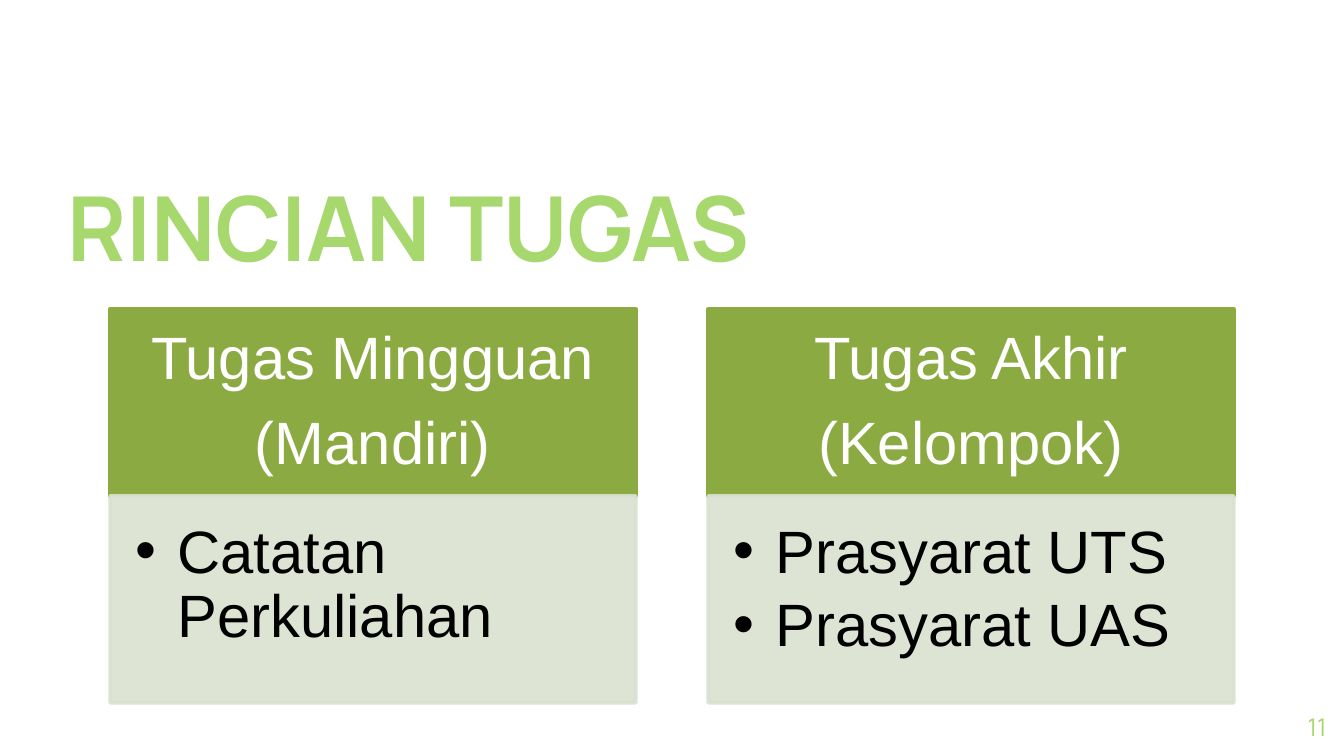
from pptx import Presentation
from pptx.dml.color import RGBColor
from pptx.enum.shapes import MSO_SHAPE as SHAPE
from pptx.enum.text import MSO_ANCHOR as ANCHOR, PP_ALIGN as ALIGN
from pptx.oxml.ns import qn
from pptx.util import Inches, Pt
from lxml.etree import SubElement

LIME = RGBColor(0xA7, 0xD8, 0x6D)
OLIVE = RGBColor(0x8B, 0xAB, 0x42)
SAGE = RGBColor(0xDA, 0xE2, 0xCF)
WHITE = RGBColor(0xFF, 0xFF, 0xFF)
BLACK = RGBColor(0, 0, 0)

SLIDE_W = 10
SLIDE_H = SLIDE_W * 9 / 16
SIDES = ("left", "top", "right", "bottom")
HEAD_H, BODY_H = 1.39, 1.54
CARD_W, CARD_STEP = 3.91, 4.45
CARDS = [
    (["Tugas Mingguan", "(Mandiri)"], ["Catatan Perkuliahan"]),
    (["Tugas Akhir", "(Kelompok)"], ["Prasyarat UTS", "Prasyarat UAS"]),
]


def write(sp, lines, font, para, anchor, insets=(0, 0, 0, 0)):
    """Fill a shape with paragraphs that share one format."""
    tf = sp.text_frame
    tf.word_wrap = True
    tf.vertical_anchor = anchor
    for side, inset in zip(SIDES, insets):
        setattr(tf, f"margin_{side}", Inches(inset))
    for i, line in enumerate(lines):
        p = tf.paragraphs[0] if i == 0 else tf.add_paragraph()
        for name, value in para.items():
            setattr(p, name, value)
        r = p.add_run()
        r.text = line
        for name, value in font.items():
            if name == "color":
                r.font.color.rgb = value
            else:
                setattr(r.font, name, value)
    return tf


def add_bullets(tf, indent, color):
    for p in tf.paragraphs:
        pPr = p._p.get_or_add_pPr()
        pPr.set("marL", str(Inches(indent)))
        pPr.set("indent", str(-Inches(indent)))
        clr = SubElement(pPr, qn("a:buClr"))
        SubElement(clr, qn("a:srgbClr")).set("val", str(color))
        SubElement(pPr, qn("a:buFont")).set("typeface", "Arial")
        SubElement(pPr, qn("a:buChar")).set("char", "•")


def add_label(slide, box, text, font, align, anchor):
    sp = slide.shapes.add_textbox(*map(Inches, box))
    write(sp, [text], font, {"alignment": align}, anchor)


def add_panel(slide, box, color, opacity=100):
    sp = slide.shapes.add_shape(SHAPE.RECTANGLE, *map(Inches, box))
    sp.shadow.inherit = False
    sp.fill.solid()
    sp.fill.fore_color.rgb = color
    sp.line.color.rgb = color
    sp.line.width = Pt(2)
    if opacity < 100:
        for clr in sp._element.spPr.iter(qn("a:srgbClr")):
            SubElement(clr, qn("a:alpha")).set("val", str(opacity * 1000))
    return sp


def add_card(slide, box, heading, items):
    x, y, w, h = box
    font = {"name": "Arial", "size": Pt(32)}
    # Heading
    head = add_panel(slide, (x, y, w, HEAD_H), OLIVE)
    para = {"alignment": ALIGN.CENTER, "line_spacing": 0.9, "space_after": Pt(11.2)}
    write(head, heading, {**font, "color": WHITE}, para, ANCHOR.MIDDLE,
          (0.25, 0.14, 0.25, 0.14))
    # Bulleted body
    body = add_panel(slide, (x, y + HEAD_H, w, h - HEAD_H), SAGE, opacity=90)
    para = {"alignment": ALIGN.LEFT, "line_spacing": 0.9, "space_after": Pt(4.8)}
    tf = write(body, items, {**font, "color": BLACK}, para, ANCHOR.TOP,
               (0.19, 0.19, 0.25, 0.28))
    add_bullets(tf, 0.31, BLACK)


def main():
    prs = Presentation()
    prs.slide_width, prs.slide_height = Inches(SLIDE_W), Inches(SLIDE_H)
    slide = prs.slides.add_slide(prs.slide_layouts[6])
    brand = {"name": "Manrope", "color": LIME}

    # Title
    add_label(slide, (0.5, 1.14, 6.89, 0.94), "RINCIAN TUGAS",
              {**brand, "size": Pt(48), "bold": True}, ALIGN.LEFT, ANCHOR.BOTTOM)
    # Task cards
    for col, (heading, items) in enumerate(CARDS):
        box = (0.82 + col * CARD_STEP, 2.3, CARD_W, HEAD_H + BODY_H)
        add_card(slide, box, heading, items)
    # Page number
    add_label(slide, (9.27, 5.19, 0.6, 0.43), "11",
              {**brand, "size": Pt(13)}, ALIGN.RIGHT, ANCHOR.MIDDLE)

    prs.save("out.pptx")


if __name__ == "__main__":
    main()
